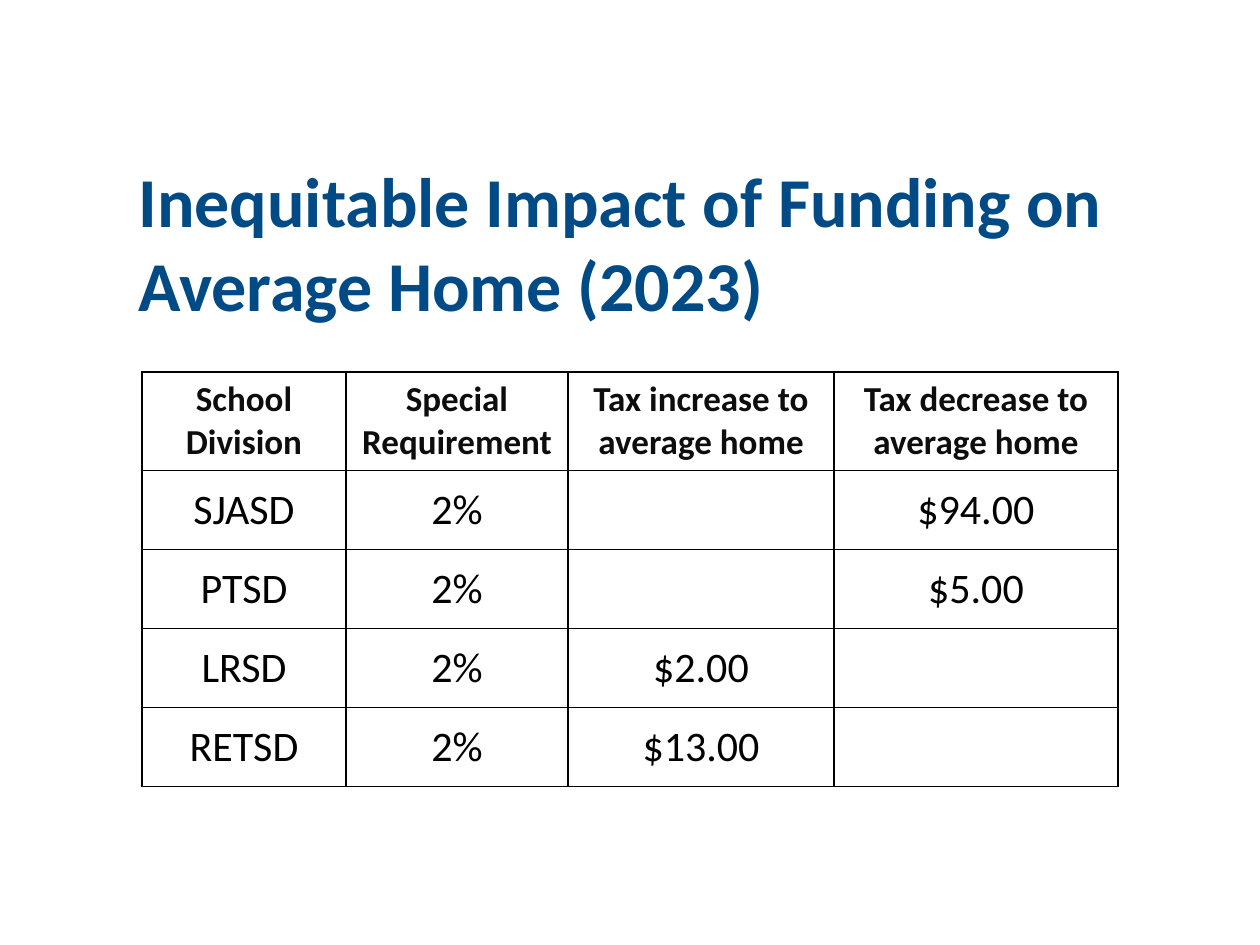
from dataclasses import dataclass

from lxml.etree import SubElement
from pptx import Presentation
from pptx.dml.color import RGBColor
from pptx.enum.text import MSO_ANCHOR, MSO_AUTO_SIZE, PP_ALIGN
from pptx.oxml.ns import qn
from pptx.slide import Slide
from pptx.table import _Cell
from pptx.text.text import _Paragraph
from pptx.util import Emu, Pt

PX_PER_INCH = 126
COLORS = {"title": "004B85", "header": "0D0D0D", "body": "000000",
          "border": "000000", "cell": "FFFFFF"}


@dataclass(frozen=True)
class TextStyle:
    size: int
    color: str
    bold: bool
    align: PP_ALIGN


TITLE = TextStyle(40, "title", True, PP_ALIGN.LEFT)
HEADER = TextStyle(20, "header", True, PP_ALIGN.CENTER)
BODY = TextStyle(24, "body", False, PP_ALIGN.CENTER)

COLUMN_WIDTHS = (204, 222, 266, 284)
HEADER_HEIGHT, BODY_HEIGHT = 84, 79
TABLE_ROWS = (
    ("School Division", "Special Requirement",
     "Tax increase to average home", "Tax decrease to average home"),
    ("SJASD", "2%", "", "$94.00"),
    ("PTSD", "2%", "", "$5.00"),
    ("LRSD", "2%", "$2.00", ""),
    ("RETSD", "2%", "$13.00", ""),
)


def px(length: int) -> Emu:
    return Emu(round(length * 914400 / PX_PER_INCH))


def write(paragraph: _Paragraph, text: str, style: TextStyle) -> None:
    paragraph.alignment = style.align
    run = paragraph.add_run()
    run.text = text
    formats = {"name": "Calibri", "size": Pt(style.size), "bold": style.bold}
    for name, value in formats.items():
        setattr(run.font, name, value)
    run.font.color.rgb = RGBColor.from_string(COLORS[style.color])


def add_borders(cell: _Cell) -> None:
    properties = cell._tc.get_or_add_tcPr()
    for side in ("a:lnL", "a:lnR", "a:lnT", "a:lnB"):
        line = SubElement(properties, qn(side), w=str(Pt(1)))
        fill = SubElement(line, qn("a:solidFill"))
        SubElement(fill, qn("a:srgbClr"), val=COLORS["border"])


def draw_title(slide: Slide, text: str) -> None:
    title = slide.shapes.title
    box = {"left": 126, "top": 200, "width": 1134, "height": 83}
    for name, value in box.items():
        setattr(title, name, px(value))
    frame = title.text_frame
    formats = {"word_wrap": True, "auto_size": MSO_AUTO_SIZE.NONE,
               "vertical_anchor": MSO_ANCHOR.MIDDLE}
    for name, value in formats.items():
        setattr(frame, name, value)
    write(frame.paragraphs[0], text, TITLE)


def draw_cell(cell: _Cell, text: str, style: TextStyle) -> None:
    cell.vertical_anchor = MSO_ANCHOR.MIDDLE
    # Borders come before the fill in the cell properties
    add_borders(cell)
    cell.fill.solid()
    cell.fill.fore_color.rgb = RGBColor.from_string(COLORS["cell"])
    if text:
        write(cell.text_frame.paragraphs[0], text, style)


def draw_table(slide: Slide) -> None:
    heights = [HEADER_HEIGHT] + [BODY_HEIGHT] * (len(TABLE_ROWS) - 1)
    table = slide.shapes.add_table(
        len(TABLE_ROWS), len(COLUMN_WIDTHS), px(142), px(372),
        px(sum(COLUMN_WIDTHS)), px(sum(heights))).table
    table.horz_banding = False
    for column, width in zip(table.columns, COLUMN_WIDTHS):
        column.width = px(width)
    for index, (row, height, texts) in enumerate(zip(table.rows, heights, TABLE_ROWS)):
        row.height = px(height)
        for cell, text in zip(row.cells, texts):
            draw_cell(cell, text, BODY if index else HEADER)


def main() -> None:
    presentation = Presentation()
    presentation.slide_width = px(1260)
    presentation.slide_height = px(945)
    # Layout 5 is title only
    slide = presentation.slides.add_slide(presentation.slide_layouts[5])
    draw_table(slide)
    draw_title(slide, "Inequitable Impact of Funding on Average Home (2023)")
    presentation.save("out.pptx")


if __name__ == "__main__":
    main()
